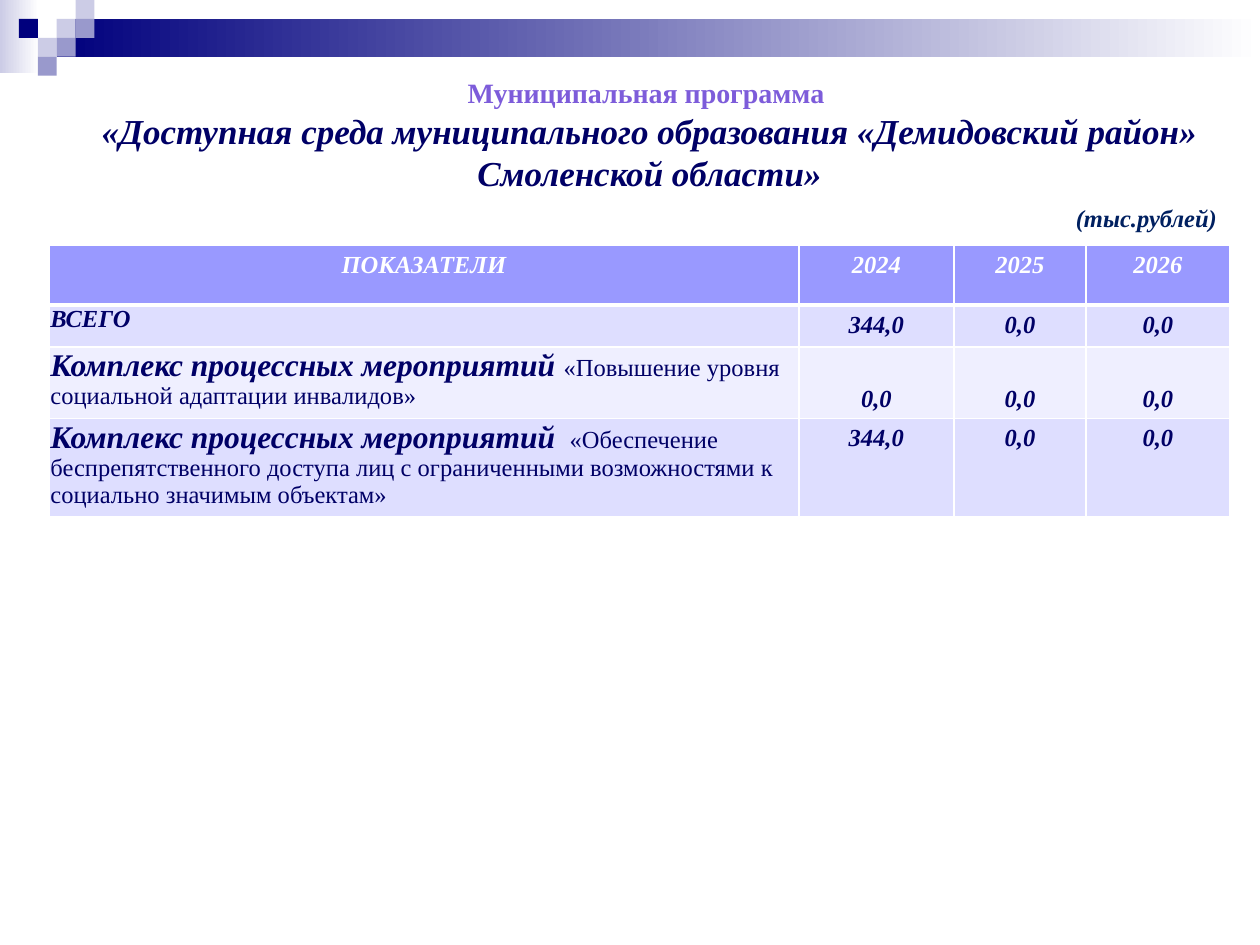
from lxml import etree
from pptx import Presentation
from pptx.dml.color import RGBColor
from pptx.enum.shapes import MSO_SHAPE
from pptx.enum.text import MSO_ANCHOR, PP_ALIGN
from pptx.oxml.ns import qn
from pptx.util import Inches, Pt

RECT = MSO_SHAPE.RECTANGLE
LEFT, CENTER = PP_ALIGN.LEFT, PP_ALIGN.CENTER
TOP, BOTTOM = MSO_ANCHOR.TOP, MSO_ANCHOR.BOTTOM
FONT = "Times New Roman"
UNIT = 0.15
COLORS = {
    "white": "FFFFFF", "navy": "00007D", "pale": "CCCCE6", "mid": "9999CC",
    "text": "000066", "violet": "7D5CDA", "note": "002060",
    "header": "9999FF", "odd": "DEDEFF", "even": "EFEFFF",
}
SQUARES = [
    (3, 1, "pale"), (4, 0, "pale"), (4, 1, "mid"), (2, 2, "pale"),
    (1, 1, "navy"), (3, 2, "mid"), (2, 3, "mid"),
]
COL_WIDTHS = [5.95, 1.23, 1.05, 1.14]
ROW_HEIGHTS = [0.47, 0.33, 0.57, 0.78]
COMPLEX = "Комплекс процессных мероприятий "
ROWS = [
    ([("ПОКАЗАТЕЛИ", 14, True)], ["2024", "2025", "2026"]),
    ([("ВСЕГО", 14, True)], ["344,0", "0,0", "0,0"]),
    ([(COMPLEX, 18, True),
      ("«Повышение уровня социальной адаптации инвалидов»", 14, False)],
     ["0,0", "0,0", "0,0"]),
    ([(COMPLEX, 18, True),
      (" «Обеспечение беспрепятственного доступа лиц с ограниченными "
       "возможностями к социально значимым объектам»", 14, False)],
     ["344,0", "0,0", "0,0"]),
]


def rgb(name):
    return RGBColor.from_string(COLORS[name])


def set_font(font, size, color, bold=True, italic=True):
    font.name, font.size = FONT, Pt(size)
    font.bold, font.italic = bold, italic
    font.color.rgb = rgb(color)


def add_rect(s, x, y, w, h, color, fade=False):
    sp = s.shapes.add_shape(RECT, Inches(x), Inches(y), Inches(w), Inches(h))
    sp.shadow.inherit = False
    sp.line.fill.background()
    if fade:
        sp.fill.gradient()
        sp.fill.gradient_angle = 0
        for stop, name in zip(sp.fill.gradient_stops, (color, "white")):
            stop.color.rgb = rgb(name)
    else:
        sp.fill.solid()
        sp.fill.fore_color.rgb = rgb(color)


def add_text(s, x, y, w, h, lines, align, wrap):
    tf = s.shapes.add_textbox(Inches(x), Inches(y), Inches(w), Inches(h)).text_frame
    tf.word_wrap = wrap
    for i, (text, size, color, italic) in enumerate(lines):
        p = tf.add_paragraph() if i else tf.paragraphs[0]
        p.text, p.alignment = text, align
        set_font(p.font, size, color, italic=italic)


def set_borders(cell, top, bottom):
    tc_pr = cell._tc.get_or_add_tcPr()
    for side, width in (("L", 1), ("R", 1), ("T", top), ("B", bottom)):
        ln = etree.SubElement(tc_pr, qn(f"a:ln{side}"), w=str(Pt(width)))
        fill = etree.SubElement(ln, qn("a:solidFill"))
        etree.SubElement(fill, qn("a:srgbClr"), val=COLORS["white"])


def fill_cell(cell, runs, align, color, background):
    cell.fill.solid()
    cell.fill.fore_color.rgb = rgb(background)
    p = cell.text_frame.paragraphs[0]
    p.alignment = align
    for text, size, strong in runs:
        r = p.add_run()
        r.text = text
        set_font(r.font, size, color, strong, strong)


def add_budget_table(s, x, y):
    table = s.shapes.add_table(
        len(ROWS), len(COL_WIDTHS), Inches(x), Inches(y),
        Inches(sum(COL_WIDTHS)), Inches(sum(ROW_HEIGHTS))).table
    for column, width in zip(table.columns, COL_WIDTHS):
        column.width = Inches(width)
    for row, height in zip(table.rows, ROW_HEIGHTS):
        row.height = Inches(height)
    for i, (label, values) in enumerate(ROWS):
        color = "text" if i else "white"
        background = ("even", "odd")[i % 2] if i else "header"
        contents = [label] + [[(value, 14, True)] for value in values]
        for j, runs in enumerate(contents):
            cell = table.cell(i, j)
            is_label = i > 0 and j == 0
            set_borders(cell, 3 if i == 1 else 1, 3 if i == 0 else 1)
            fill_cell(cell, runs, LEFT if is_label else CENTER, color, background)
            cell.vertical_anchor = BOTTOM if i == 2 and j else TOP
            if is_label:
                cell.margin_left = cell.margin_right = cell.margin_top = Inches(0.01)
                cell.margin_bottom = 0


def main():
    prs = Presentation()
    prs.slide_width, prs.slide_height = Inches(10), Inches(7.5)
    s = prs.slides.add_slide(prs.slide_layouts[6])
    add_rect(s, 0, 0, 0.31, 0.58, "pale", fade=True)
    add_rect(s, 3 * UNIT, UNIT, 10 - 3 * UNIT, 2 * UNIT, "navy", fade=True)
    for col, row, color in SQUARES:
        add_rect(s, col * UNIT, row * UNIT, UNIT, UNIT, color)
    add_text(s, 0.31, 0.55, 9.69, 1.04, [
        ("Муниципальная программа ", 16, "violet", False),
        ("«Доступная среда муниципального образования «Демидовский район» "
         "Смоленской области»", 20, "text", True),
    ], CENTER, True)
    add_budget_table(s, 0.39, 1.95)
    add_text(s, 8.44, 1.56, 1.33, 0.34,
             [("(тыс.рублей)", 14, "note", True)], LEFT, False)
    prs.save("out.pptx")


if __name__ == "__main__":
    main()
